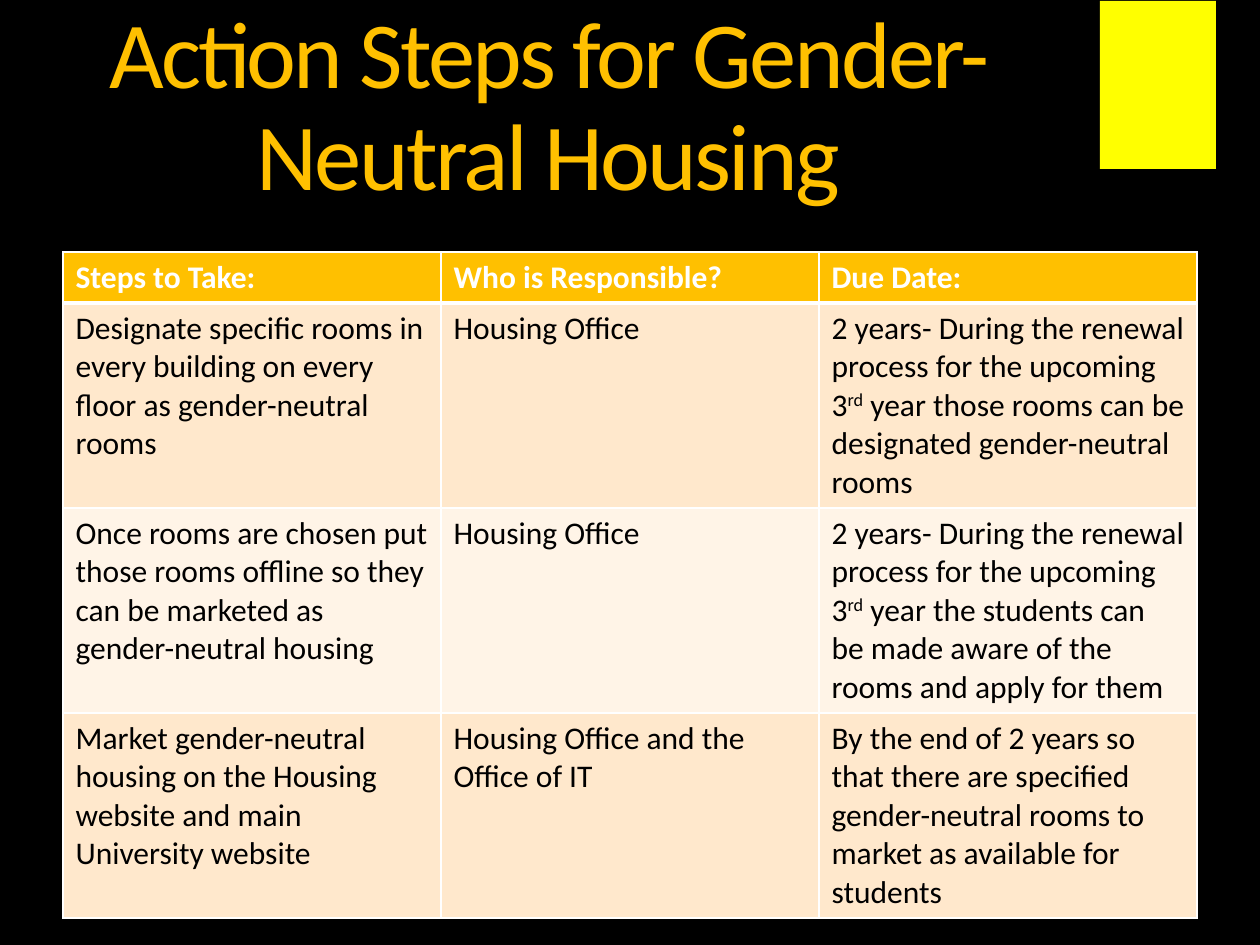
import pptx
import pptx.dml.color
import pptx.enum.shapes
import pptx.enum.text
import pptx.oxml
import pptx.oxml.ns
import pptx.util

BLACK = pptx.dml.color.RGBColor(0x00, 0x00, 0x00)
WHITE = pptx.dml.color.RGBColor(0xFF, 0xFF, 0xFF)
GOLD = pptx.dml.color.RGBColor(0xFF, 0xC0, 0x00)
YELLOW = pptx.dml.color.RGBColor(0xFF, 0xFF, 0x00)
PEACH = pptx.dml.color.RGBColor(0xFF, 0xE8, 0xCC)
CREAM = pptx.dml.color.RGBColor(0xFF, 0xF4, 0xE7)

PIXELS_PER_INCH = 126
FONT = "Calibri"
SUPERSCRIPT = "rd"


def px(length):
    return pptx.util.Emu(round(length * 914400 / PIXELS_PER_INCH))


class SlideBuilder:
    """Holds the text style and the current slide."""

    def __init__(self, slide, background):
        self.slide = slide
        slide.background.fill.solid()
        slide.background.fill.fore_color.rgb = background

    def run(self, paragraph, text, size, color, bold=False):
        run = paragraph.add_run()
        run.text = text
        run.font.name = FONT
        run.font.size = pptx.util.Pt(size)
        run.font.bold = bold
        run.font.color.rgb = color
        return run

    def title(self, text, left, top, width, height):
        shape = self.slide.shapes.title
        shape.left, shape.top = px(left), px(top)
        shape.width, shape.height = px(width), px(height)
        frame = shape.text_frame
        frame.word_wrap = True
        frame.auto_size = pptx.enum.text.MSO_AUTO_SIZE.NONE
        frame.vertical_anchor = pptx.enum.text.MSO_ANCHOR.MIDDLE
        frame.margin_left = frame.margin_right = 0
        frame.margin_top = frame.margin_bottom = 0
        paragraph = frame.paragraphs[0]
        paragraph.alignment = pptx.enum.text.PP_ALIGN.CENTER
        paragraph.line_spacing = 0.9
        run = self.run(paragraph, text, 54, GOLD)
        run.font._element.set("spc", "-150")

    def rectangle(self, left, top, width, height, color):
        shape = self.slide.shapes.add_shape(
            pptx.enum.shapes.MSO_SHAPE.RECTANGLE,
            px(left), px(top), px(width), px(height))
        shape.shadow.inherit = False
        shape.fill.solid()
        shape.fill.fore_color.rgb = color
        shape.line.fill.background()

    def borders(self, cell, top, bottom):
        properties = cell._tc.get_or_add_tcPr()
        for side, points in (("L", 1), ("R", 1), ("T", top), ("B", bottom)):
            properties.append(pptx.oxml.parse_xml(
                f'<a:ln{side} {pptx.oxml.ns.nsdecls("a")} w="{pptx.util.Pt(points)}">'
                f'<a:solidFill><a:srgbClr val="{WHITE}"/></a:solidFill></a:ln{side}>'))

    def table(self, rows, left, top, column_width, header_height, row_height):
        columns = len(rows[0])
        height = header_height + row_height * (len(rows) - 1)
        table = self.slide.shapes.add_table(
            len(rows), columns, px(left), px(top),
            px(column_width * columns), px(height)).table
        for column in table.columns:
            column.width = px(column_width)
        for row_index, row in enumerate(rows):
            header = row_index == 0
            table.rows[row_index].height = px(header_height if header else row_height)
            band = GOLD if header else (CREAM, PEACH)[row_index % 2]
            for column_index, pieces in enumerate(row):
                cell = table.cell(row_index, column_index)
                self.borders(cell, 3 if row_index == 1 else 1, 3 if header else 1)
                cell.fill.solid()
                cell.fill.fore_color.rgb = band
                paragraph = cell.text_frame.paragraphs[0]
                for piece in pieces:
                    run = self.run(paragraph, piece, 18,
                                   WHITE if header else BLACK, header)
                    if piece == SUPERSCRIPT:
                        run.font._element.set("baseline", "30000")


def main():
    presentation = pptx.Presentation()
    presentation.slide_width = px(1260)
    presentation.slide_height = px(945)
    slide = presentation.slides.add_slide(presentation.slide_layouts[5])
    builder = SlideBuilder(slide, BLACK)

    # Title
    builder.title("Action Steps for Gender- Neutral Housing", 63, 4, 970, 210)

    # Action plan; each cell is a list of text runs
    renewal = "2 years- During the renewal process for the upcoming 3"
    rows = [
        [["Steps to Take:"], ["Who is Responsible?"], ["Due Date:"]],
        [["Designate specific rooms in every building on every floor "
          "as gender-neutral rooms"],
         ["Housing Office"],
         [renewal, SUPERSCRIPT,
          " year those rooms can be designated gender-neutral rooms"]],
        [["Once rooms are chosen put those rooms offline so they can be "
          "marketed as gender-neutral housing"],
         ["Housing Office"],
         [renewal, SUPERSCRIPT,
          " year the students can be made aware of the rooms and apply for them"]],
        [["Market gender-neutral housing on the Housing website and main "
          "University website"],
         ["Housing Office and the Office of IT"],
         ["By the end of 2 years so that there are specified gender-neutral "
          "rooms to market as available for students"]],
    ]
    builder.table(rows, 63, 252, 378, 51, 205)

    # Corner accent
    builder.rectangle(1100, 1, 116, 168, YELLOW)

    presentation.save("out.pptx")


if __name__ == "__main__":
    main()
